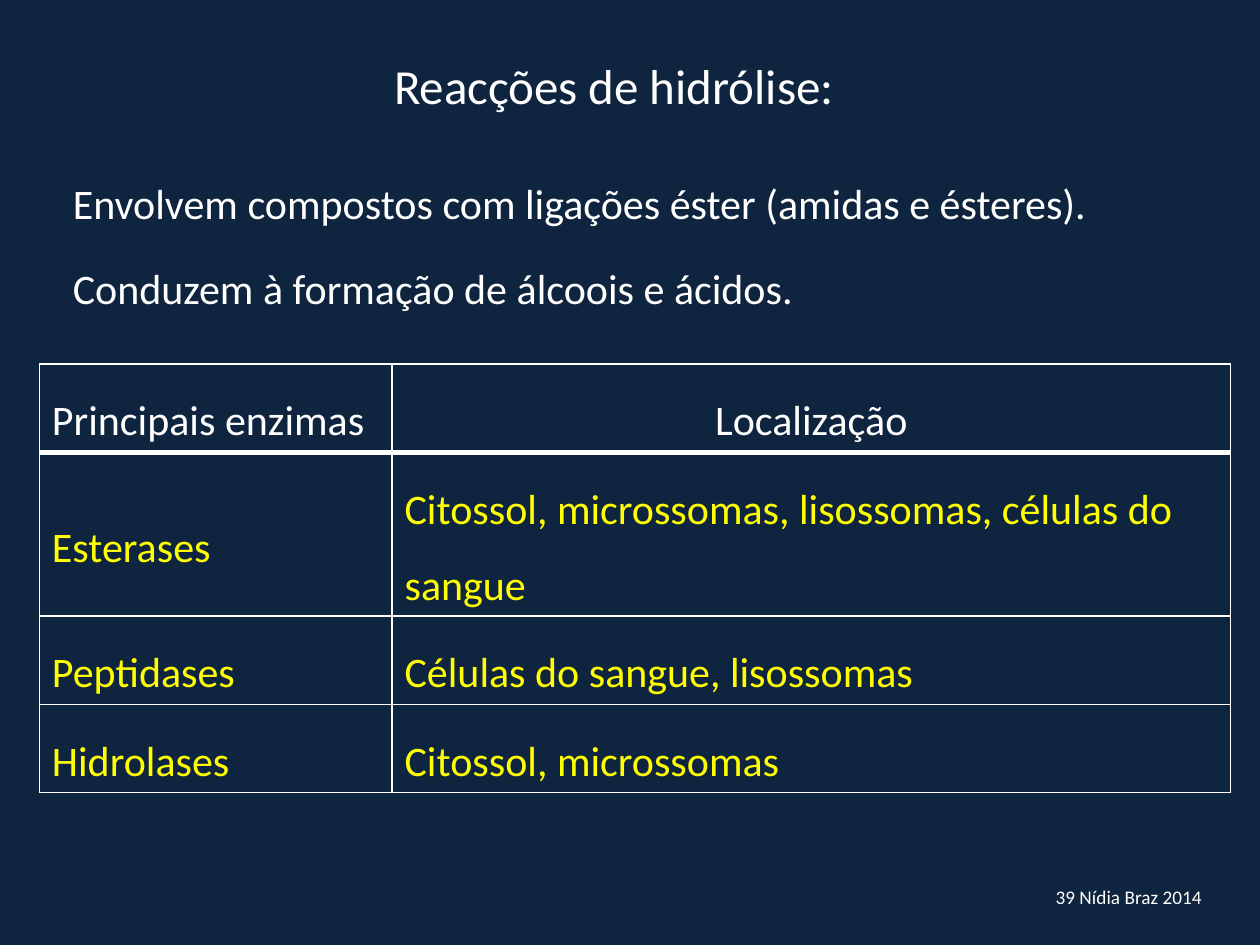
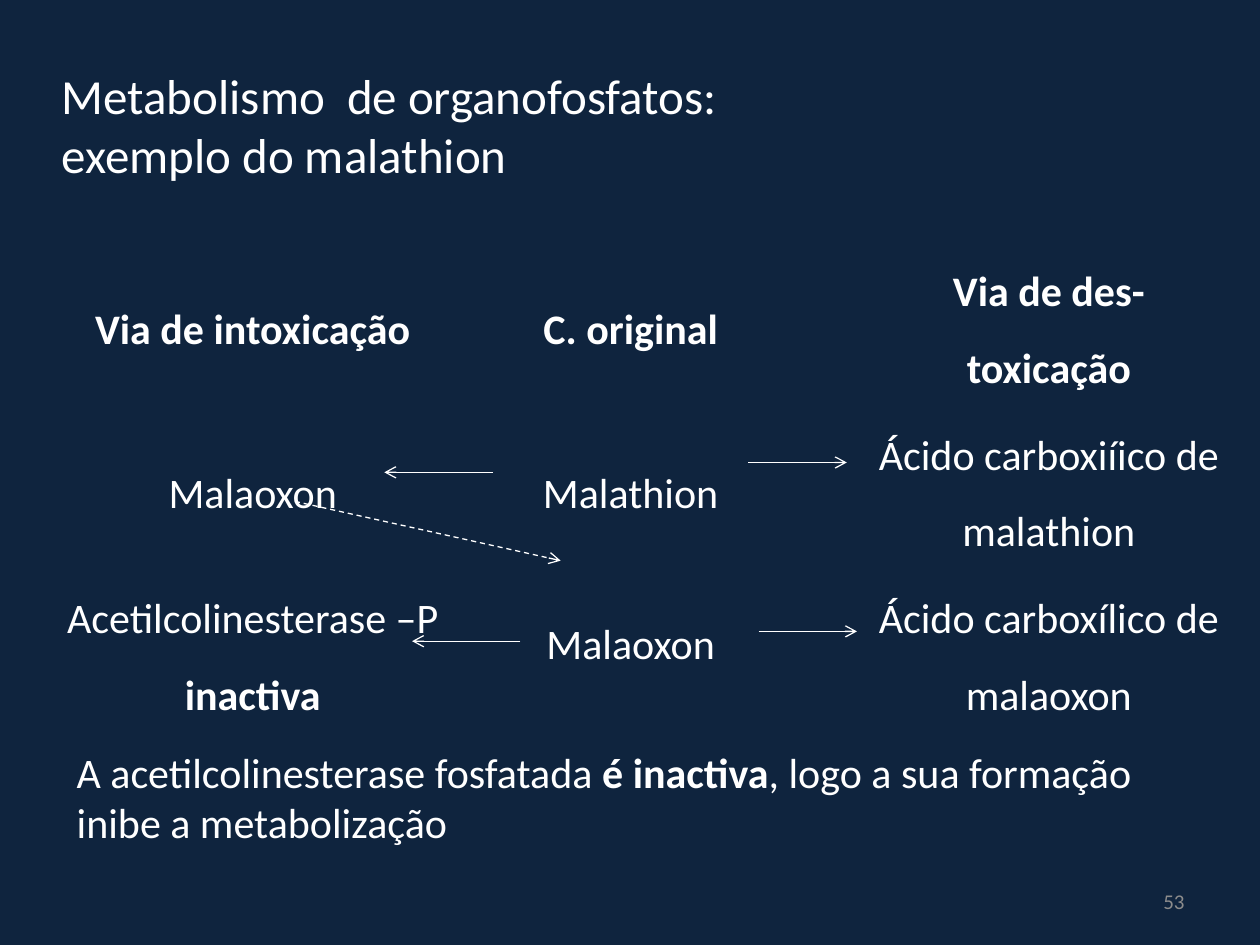
from lxml.etree import SubElement
from pptx import Presentation
from pptx.dml.color import RGBColor
from pptx.enum.dml import MSO_LINE
from pptx.enum.shapes import MSO_CONNECTOR
from pptx.enum.text import MSO_ANCHOR as Anchor, MSO_AUTO_SIZE, PP_ALIGN as Align
from pptx.oxml.ns import qn
from pptx.util import Pt

COLORS = {
    "background": "0F243E",
    "text": "FFFFFF",
    "highlight": "FFFF00",
    "number": "8C8C8C",
}
FONT = "Calibri"
TITLE_SIZE = 28
BODY_SIZE = 24
PLAIN_TABLE_STYLE = "{2D5ABB26-0587-4C30-8999-92F81FD0307C}"


def rgb(name):
    return RGBColor.from_string(COLORS[name])


def format_text(text_frame, size=BODY_SIZE, color="text", align=Align.LEFT,
                bold=False, line_spacing=None, before=0, after=0):
    for paragraph in text_frame.paragraphs:
        paragraph.alignment = align
        paragraph.space_before = Pt(before)
        paragraph.space_after = Pt(after)
        if line_spacing:
            paragraph.line_spacing = line_spacing
        for run in paragraph.runs:
            run.font.name = FONT
            run.font.size = Pt(size)
            run.font.bold = bold
            run.font.color.rgb = rgb(color)


def add_text(slide, box, text, anchor=Anchor.TOP, **style):
    shape = slide.shapes.add_textbox(*map(Pt, box))
    text_frame = shape.text_frame
    text_frame.word_wrap = True
    text_frame.vertical_anchor = anchor
    text_frame.text = text
    format_text(text_frame, **style)
    return text_frame


def add_titled_slide(presentation, box, title, align=Align.LEFT):
    slide = presentation.slides.add_slide(presentation.slide_layouts[5])
    shape = slide.shapes.title
    shape.left, shape.top, shape.width, shape.height = map(Pt, box)
    text_frame = shape.text_frame
    text_frame.auto_size = MSO_AUTO_SIZE.NONE
    text_frame.vertical_anchor = Anchor.TOP
    text_frame.text = title
    format_text(text_frame, size=TITLE_SIZE, align=align)
    return slide


def add_plain_table(slide, left, top, widths, heights):
    frame = slide.shapes.add_table(len(heights), len(widths), Pt(left), Pt(top),
                                   Pt(sum(widths)), Pt(sum(heights)))
    table = frame.table
    table.first_row = table.horz_banding = False
    table._tbl.tblPr.find(qn("a:tableStyleId")).text = PLAIN_TABLE_STYLE
    for column, width in zip(table.columns, widths):
        column.width = Pt(width)
    for row, height in zip(table.rows, heights):
        row.height = Pt(height)
    for cell in table.iter_cells():
        cell.fill.background()
        cell.margin_bottom = Pt(2)
    return table


def set_borders(cell, **widths):
    properties = cell._tc.get_or_add_tcPr()
    for position, side in enumerate("LRTB"):
        line = SubElement(properties, qn(f"a:ln{side}"), w=str(Pt(widths.get(side, 1))))
        fill = SubElement(line, qn("a:solidFill"))
        SubElement(fill, qn("a:srgbClr"), val=COLORS["text"])
        properties.insert(position, line)


def add_arrow(slide, start, end, dashed=False):
    connector = slide.shapes.add_connector(MSO_CONNECTOR.STRAIGHT, *map(Pt, start + end))
    connector.line.color.rgb = rgb("text")
    connector.line.width = Pt(0.75)
    if dashed:
        connector.line.dash_style = MSO_LINE.DASH
    SubElement(connector.line._get_or_add_ln(), qn("a:tailEnd"), type="arrow")
    SubElement(connector._element.spPr, qn("a:effectLst"))


def add_statements(slide, left, top, width, height):
    cell = add_plain_table(slide, left, top, [width], [height]).cell(0, 0)
    cell.margin_left = cell.margin_right = Pt(13.5)
    cell.text = ("Envolvem compostos com ligações éster (amidas e ésteres).\n"
                 "Conduzem à formação de álcoois e ácidos.")
    format_text(cell.text_frame, align=Align.JUSTIFY, line_spacing=1.5, before=4.8)


def add_enzyme_table(slide, left, top, width):
    rows = [
        ("Principais enzimas", "Localização"),
        ("Esterases", "Citossol, microssomas, lisossomas, células do sangue"),
        ("Peptidases", "Células do sangue, lisossomas"),
        ("Hidrolases", "Citossol, microssomas"),
    ]
    name_width = 201.5
    table = add_plain_table(slide, left, top, [name_width, width - name_width],
                            [50.4, 93.6, 50.4, 50.4])
    for row_index, row in enumerate(rows):
        for column_index, text in enumerate(row):
            cell = table.cell(row_index, column_index)
            cell.text = text
            if row_index == 0:
                align = Align.CENTER if column_index else Align.LEFT
                format_text(cell.text_frame, align=align, line_spacing=1.5, before=6, after=12)
                set_borders(cell, B=3)
            else:
                format_text(cell.text_frame, color="highlight", line_spacing=1.5)
                set_borders(cell, T=3 if row_index == 1 else 1)
    table.cell(1, 0).vertical_anchor = Anchor.MIDDLE


def add_pathways(slide, left, top):
    rows = [
        ("Via de intoxicação", "C. original", "Via de des-toxicação"),
        ("Malaoxon", "Malathion", "Ácido carboxiíico de malathion"),
        ("Acetilcolinesterase –P\ninactiva", "Malaoxon", "Ácido carboxílico de malaoxon"),
    ]
    table = add_plain_table(slide, left, top, [226.8, 36.7, 131.8, 66.2, 213.8], [93.6] * 3)
    for row_index, row in enumerate(rows):
        heading = row_index == 0
        for column_index, text in enumerate(row):
            cell = table.cell(row_index, 2 * column_index)
            cell.vertical_anchor = Anchor.MIDDLE
            cell.text = text
            format_text(cell.text_frame, align=Align.CENTER, bold=heading,
                        line_spacing=1.5, after=12 if heading else 0)
    table.cell(2, 0).text_frame.paragraphs[1].runs[0].font.bold = True
    table.cell(2, 2).text_frame.paragraphs[0].line_spacing = 1.0

    row_step = 96.5
    for row_index in range(2):
        y = top + 136 + row_index * row_step
        intoxication = left + 250.5 + 15.9 * row_index
        detoxication = left + 396.7 + 5.8 * row_index
        add_arrow(slide, (intoxication, y), (intoxication - 61.9, y))
        add_arrow(slide, (detoxication, y - 5.6), (detoxication + 56.2, y - 5.6))
    add_arrow(slide, (left + 137.5, top + 152.6), (left + 289.4, top + 186.5), dashed=True)


def add_conclusion(slide, box):
    text_frame = add_text(slide, box, "A acetilcolinesterase fosfatada ")
    paragraph = text_frame.paragraphs[0]
    for text in ("é inactiva", ", logo a sua formação inibe a metabolização"):
        paragraph.add_run().text = text
    format_text(text_frame)
    paragraph.runs[1].font.bold = True


def build_hydrolysis_slide(presentation):
    slide = add_titled_slide(presentation, (44.8, 28.1, 612, 67),
                             "Reacções de hidrólise:", Align.CENTER)
    add_statements(slide, 28.1, 84.2, 675.4, 101.5)
    add_enzyme_table(slide, 22.5, 208.1, 680.8)
    add_text(slide, (585.6, 502.2, 118.8, 20.9), "39 Nídia Braz 2014",
             size=11, align=Align.CENTER)


def build_malathion_slide(presentation):
    slide = add_titled_slide(presentation, (28.1, 33.8, 658.1, 74.9),
                             "Metabolismo  de organofosfatos:\nexemplo do malathion")
    add_pathways(slide, 31, 133.9)
    add_conclusion(slide, (36.7, 423, 635, 65.5))
    add_text(slide, (516.2, 500.4, 167.8, 28.8), "53", Anchor.MIDDLE,
             size=12, color="number", align=Align.RIGHT)


def main():
    presentation = Presentation()
    presentation.slide_width = Pt(720)
    presentation.slide_height = Pt(540)
    background = presentation.slide_master.background.fill
    background.solid()
    background.fore_color.rgb = rgb("background")
    build_hydrolysis_slide(presentation)
    build_malathion_slide(presentation)
    presentation.save("out.pptx")


if __name__ == "__main__":
    main()
